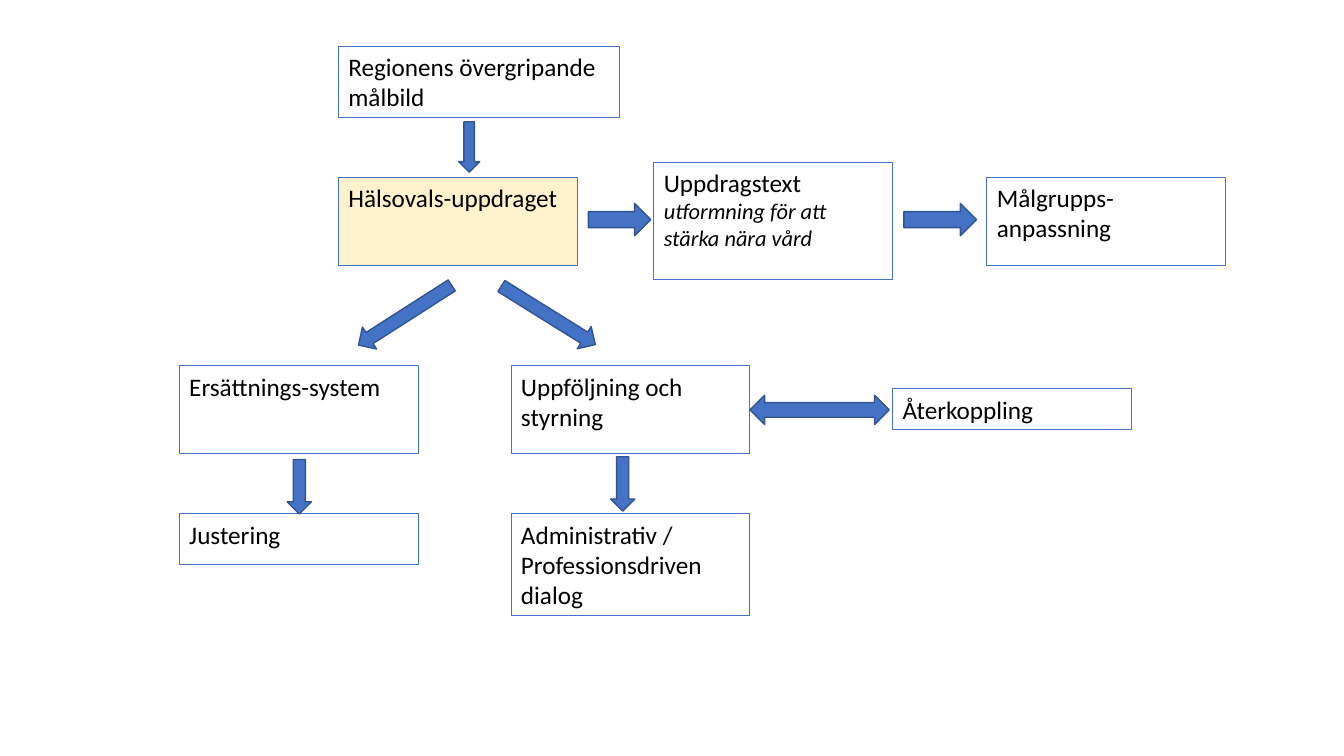
"""Build a flow chart of the regional health care assignment."""
from pptx import Presentation
from pptx.dml.color import RGBColor
from pptx.enum.shapes import MSO_SHAPE
from pptx.enum.text import MSO_ANCHOR, PP_ALIGN
from pptx.util import Cm, Pt

COLORS = {"blue": "4472C4", "edge": "325491", "cream": "FFF2CC", "text": "000000"}
BOX_W, BOX_H = 6.02, 2.21
COL_PAY, COL_GOAL, COL_FOLLOW = 4.52, 8.53, 12.88
ROW_TASK, ROW_FOLLOW, ROW_RESULT = 4.47, 9.22, 12.95

prs = Presentation()
prs.slide_width, prs.slide_height = Cm(33.87), Cm(19.05)
s = prs.slides.add_slide(prs.slide_layouts[6])


def add_shape(kind, x, y, w, h, fill=None, line="blue", weight=0.75, rotation=0):
    sp = s.shapes.add_shape(kind, Cm(x), Cm(y), Cm(w), Cm(h))
    sp.shadow.inherit = False
    sp.rotation = rotation
    if fill:
        sp.fill.solid()
        sp.fill.fore_color.rgb = RGBColor.from_string(COLORS[fill])
    else:
        sp.fill.background()
    sp.line.color.rgb = RGBColor.from_string(COLORS[line])
    sp.line.width = Pt(weight)
    return sp


def add_text(p, text, size=18, italic=False, color="text", font="Calibri"):
    p.alignment = PP_ALIGN.LEFT
    r = p.add_run()
    r.text = text
    r.font.name = font
    r.font.size = Pt(size)
    r.font.italic = italic
    r.font.color.rgb = RGBColor.from_string(COLORS[color])


boxes = [
    ("Regionens övergripande målbild", COL_GOAL, 1.17, 7.09, 1.8, None),
    ("Uppdragstext", 16.48, 4.09, BOX_W, 2.95, None),
    ("Ersättnings-system", COL_PAY, ROW_FOLLOW, BOX_W, BOX_H, None),
    ("Målgrupps-anpassning", 24.87, ROW_TASK, BOX_W, BOX_H, None),
    ("Hälsovals-uppdraget", COL_GOAL, ROW_TASK, BOX_W, BOX_H, "cream"),
    ("Återkoppling", 22.5, 9.8, BOX_W, 1.02, None),
    ("Uppföljning och styrning", COL_FOLLOW, ROW_FOLLOW, BOX_W, BOX_H, None),
    ("Administrativ / Professionsdriven dialog", COL_FOLLOW, ROW_RESULT, BOX_W, 2.57, None),
    ("Justering", COL_PAY, ROW_RESULT, BOX_W, 1.27, None),
]
subtitles = {"Uppdragstext": "utformning för att stärka nära vård"}
for text, x, y, w, h, fill in boxes:
    tf = add_shape(MSO_SHAPE.RECTANGLE, x, y, w, h, fill=fill).text_frame
    tf.word_wrap = True
    tf.vertical_anchor = MSO_ANCHOR.TOP
    add_text(tf.paragraphs[0], text)
    if text in subtitles:
        add_text(tf.add_paragraph(), subtitles[text], size=16, italic=True)

arrows = [
    (MSO_SHAPE.DOWN_ARROW, 11.56, 3.07, 0.53, 1.27, 0),
    (MSO_SHAPE.DOWN_ARROW, 7.24, 11.58, 0.61, 1.37, 0),
    (MSO_SHAPE.DOWN_ARROW, 15.39, 11.51, 0.61, 1.37, 0),
    (MSO_SHAPE.DOWN_ARROW, 9.88, 6.55, 0.66, 2.79, 57.4),
    (MSO_SHAPE.DOWN_ARROW, 13.49, 6.55, 0.66, 2.79, 301.9),
    (MSO_SHAPE.RIGHT_ARROW, 14.83, 5.13, 1.57, 0.81, 0),
    (MSO_SHAPE.RIGHT_ARROW, 22.78, 5.13, 1.83, 0.81, 0),
    (MSO_SHAPE.LEFT_RIGHT_ARROW, 18.9, 9.96, 3.51, 0.74, 0),
]
for kind, x, y, w, h, rotation in arrows:
    add_shape(kind, x, y, w, h, fill="blue", line="edge", weight=1, rotation=rotation)

prs.save("out.pptx")
